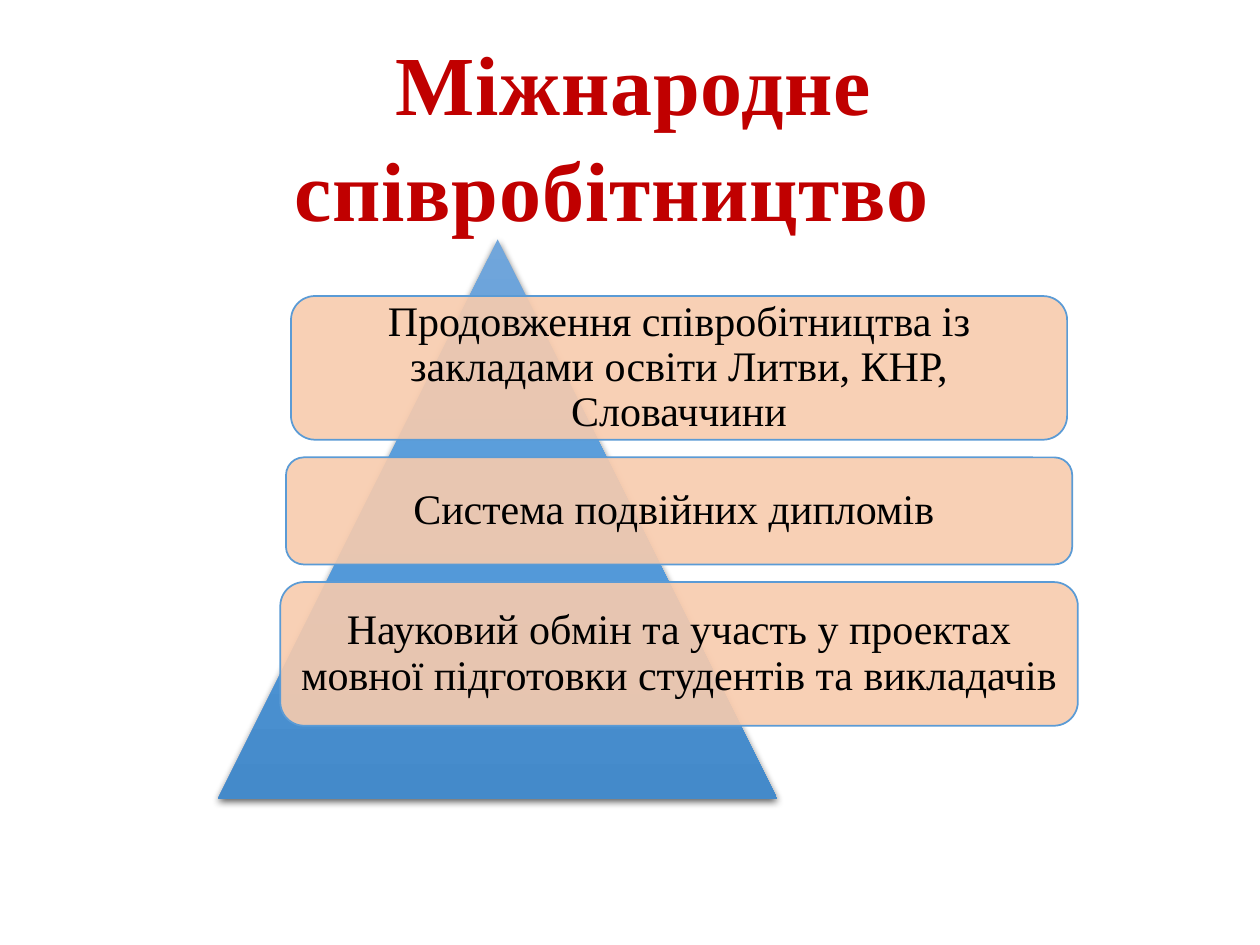
from lxml.etree import SubElement
from pptx import Presentation
from pptx.dml.color import RGBColor
from pptx.enum.shapes import MSO_SHAPE
from pptx.enum.text import MSO_ANCHOR, PP_ALIGN
from pptx.oxml import parse_xml
from pptx.oxml.ns import nsdecls, qn
from pptx.util import Inches, Pt

TITLE = " Міжнародне співробітництво "
CARDS = [
    ("Продовження співробітництва із закладами освіти Литви, КНР, Словаччини", 6.16, 1.14),
    ("Система подвійних дипломів ", 6.24, 0.85),
    ("Науковий обмін та участь у проектах мовної підготовки студентів та викладачів", 6.33, 1.14),
]
CARD_CENTER, CARD_TOP, CARD_GAP = 5.39, 2.35, 0.14
PYRAMID = (1.73, 1.9, 4.44, 4.44)
PYRAMID_STOPS = [(0, "71A6DB"), (50, "559BDB"), (100, "448ACA")]
TITLE_FONT = {"name": "Times New Roman", "size": Pt(48), "bold": True}
CARD_FONT = {"name": "Times New Roman", "size": Pt(24)}


def rgb(value):
    """Turn a hex string into a colour."""
    return RGBColor.from_string(value)


def write(s, text, font, color, inset, spacing):
    """Fill a shape with one centred, formatted paragraph."""
    tf = s.text_frame
    frame = {"word_wrap": True, "vertical_anchor": MSO_ANCHOR.MIDDLE,
             "margin_left": Inches(inset), "margin_right": Inches(inset),
             "margin_top": Inches(0.05), "margin_bottom": Inches(0.05)}
    for name, value in frame.items():
        setattr(tf, name, value)
    p = tf.paragraphs[0]
    p.alignment, p.line_spacing = PP_ALIGN.CENTER, spacing
    r = p.add_run()
    r.text = text
    for name, value in font.items():
        setattr(r.font, name, value)
    r.font.color.rgb = rgb(color)
    return r


def add_title(slide):
    """Place and format the slide title."""
    s = slide.shapes.title
    s.left, s.top, s.width, s.height = map(Inches, (0.31, 0.19, 9.27, 1.72))
    r = write(s, TITLE, TITLE_FONT, "C00000", 0.3, 1.05)
    r.font._element.set("spc", "50")


def add_pyramid(slide):
    """Draw the shaded triangle with its soft shadow."""
    s = slide.shapes.add_shape(MSO_SHAPE.ISOSCELES_TRIANGLE, *map(Inches, PYRAMID))
    s.line.fill.background()
    stops = "".join(f'<a:gs pos="{pos * 1000}"><a:srgbClr val="{color}"/></a:gs>'
                    for pos, color in PYRAMID_STOPS)
    gradient = parse_xml(f'<a:gradFill {nsdecls("a")} rotWithShape="1"><a:gsLst>{stops}</a:gsLst>'
                         '<a:lin ang="5400000" scaled="0"/></a:gradFill>')
    props = s._element.spPr
    props.find(qn("a:prstGeom")).addnext(gradient)
    props.append(parse_xml(
        f'<a:effectLst {nsdecls("a")}><a:outerShdw blurRad="{Pt(4.5)}" dist="{Pt(1.5)}" '
        'dir="5400000" algn="ctr" rotWithShape="0"><a:srgbClr val="000000">'
        '<a:alpha val="63000"/></a:srgbClr></a:outerShdw></a:effectLst>'))


def add_cards(slide):
    """Stack the translucent cards around a common centre line."""
    top = CARD_TOP
    for text, width, height in CARDS:
        box = (CARD_CENTER - width / 2, top, width, height)
        s = slide.shapes.add_shape(MSO_SHAPE.ROUNDED_RECTANGLE, *map(Inches, box))
        s.shadow.inherit = False
        s.fill.solid()
        s.fill.fore_color.rgb = rgb("F8CBAD")
        SubElement(s._element.spPr.find(".//" + qn("a:srgbClr")), qn("a:alpha"), val="90000")
        s.line.color.rgb, s.line.width = rgb("5B9BD5"), Pt(1)
        write(s, text, CARD_FONT, "000000", 0.09, 0.9)
        top += height + CARD_GAP


def main():
    """Build and save the slide."""
    prs = Presentation()
    prs.slide_width, prs.slide_height = Inches(10), Inches(7.5)
    slide = prs.slides.add_slide(prs.slide_layouts[5])
    add_title(slide)
    add_pyramid(slide)
    add_cards(slide)
    prs.save("out.pptx")


if __name__ == "__main__":
    main()
